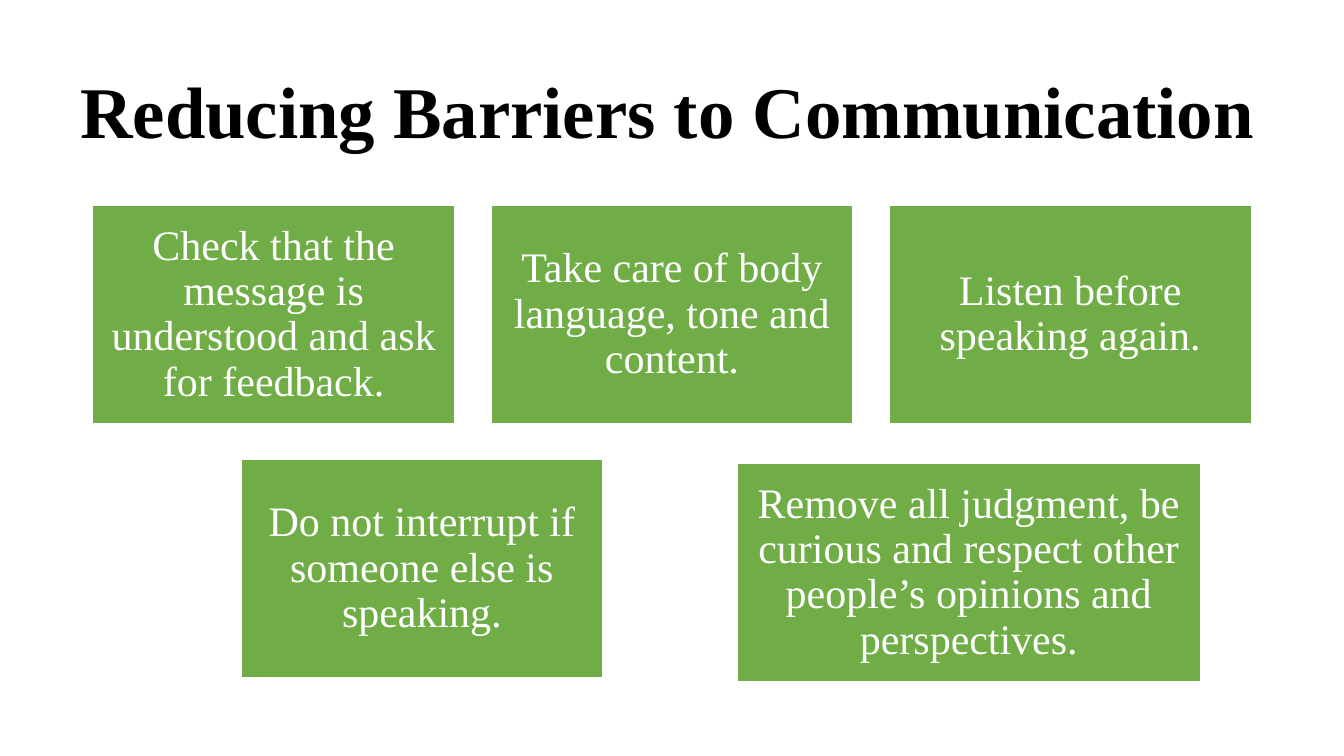
from pptx import Presentation
from pptx.dml.color import RGBColor
from pptx.enum.shapes import MSO_SHAPE
from pptx.enum.text import MSO_ANCHOR, PP_ALIGN
from pptx.util import Inches, Pt

RECTANGLE = MSO_SHAPE.RECTANGLE
MIDDLE = MSO_ANCHOR.MIDDLE
CENTER = PP_ALIGN.CENTER

BLACK = RGBColor(0x00, 0x00, 0x00)
WHITE = RGBColor(0xFF, 0xFF, 0xFF)
GREEN = RGBColor(0x70, 0xAD, 0x47)
FONT = "Times New Roman"

CARD_WIDTH, CARD_HEIGHT = 3.59, 2.16
WIDE_CARD_WIDTH = 4.6
TOP_ROW_LEFT, TOP_ROW_TOP, TOP_ROW_PITCH = 0.92, 2.04, 3.95


def format_text(frame, text, size, color, margin):
    """Fill a frame with one centred paragraph in the slide's typeface."""
    frame.text = text
    frame.word_wrap = True
    frame.vertical_anchor = MIDDLE
    frame.margin_left = frame.margin_right = Inches(margin)
    frame.margin_top = frame.margin_bottom = Inches(margin)
    paragraph = frame.paragraphs[0]
    paragraph.alignment = CENTER
    paragraph.line_spacing = 0.9
    paragraph.font.name = FONT
    paragraph.font.size = Pt(size)
    paragraph.font.color.rgb = color
    return paragraph


prs = Presentation()
prs.slide_width = Inches(13.33)
prs.slide_height = Inches(7.5)
slide = prs.slides.add_slide(prs.slide_layouts[5])

title = slide.shapes.title
title.left, title.top = Inches(0.57), Inches(0.52)
title.width, title.height = Inches(12.1), Inches(1.24)
heading = format_text(title.text_frame, "Reducing Barriers to Communication", 52, BLACK, 0.05)
heading.font.bold = True

top_row_tips = [
    "Check that the message is understood and ask for feedback.",
    "Take care of body language, tone and content.",
    "Listen before speaking again.",
]
cards = [
    (TOP_ROW_LEFT + column * TOP_ROW_PITCH, TOP_ROW_TOP, CARD_WIDTH, tip)
    for column, tip in enumerate(top_row_tips)
]
cards += [
    (2.39, 4.56, CARD_WIDTH, "Do not interrupt if someone else is speaking."),
    (7.31, 4.6, WIDE_CARD_WIDTH,
     "Remove all judgment, be curious and respect other people’s opinions and perspectives."),
]

for left, top, width, tip in cards:
    card = slide.shapes.add_shape(
        RECTANGLE, Inches(left), Inches(top), Inches(width), Inches(CARD_HEIGHT))
    card.shadow.inherit = False
    card.fill.solid()
    card.fill.fore_color.rgb = GREEN
    card.line.color.rgb = WHITE
    card.line.width = Pt(1)
    format_text(card.text_frame, tip, 30, WHITE, 0.12)

prs.save("out.pptx")
